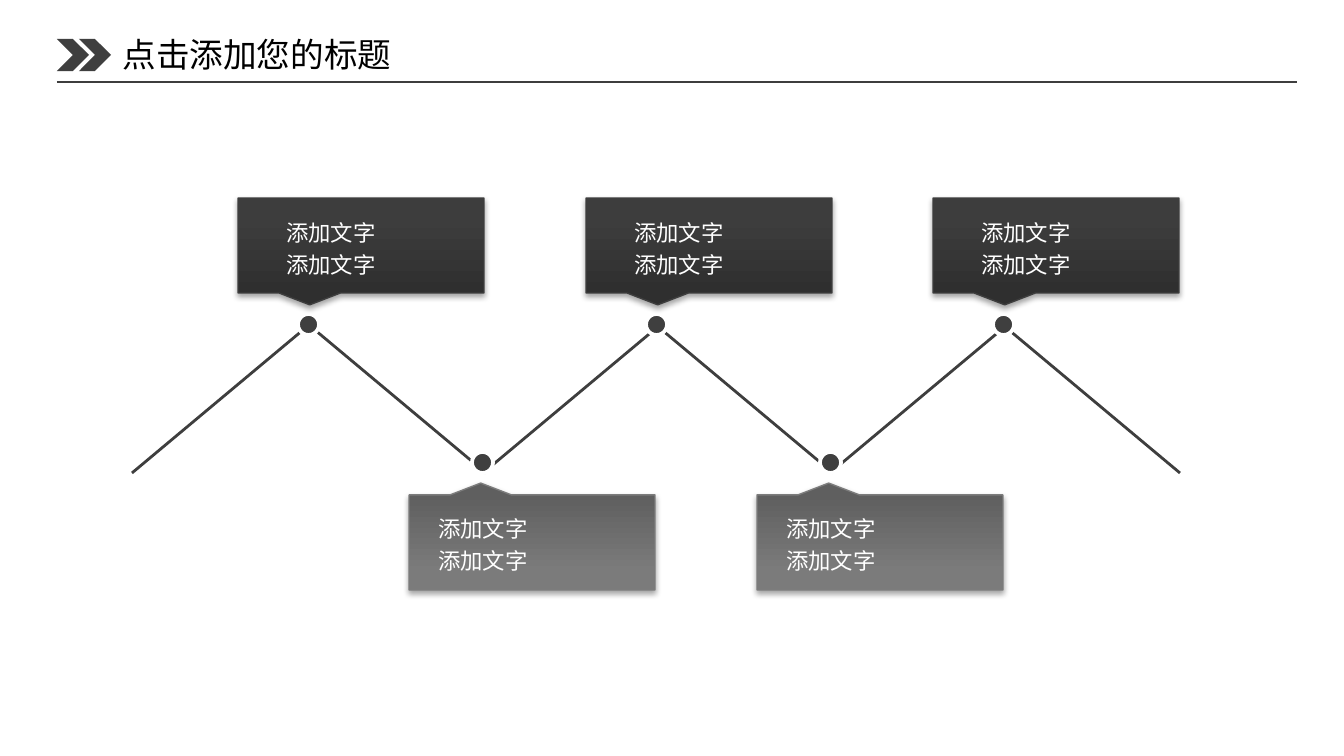
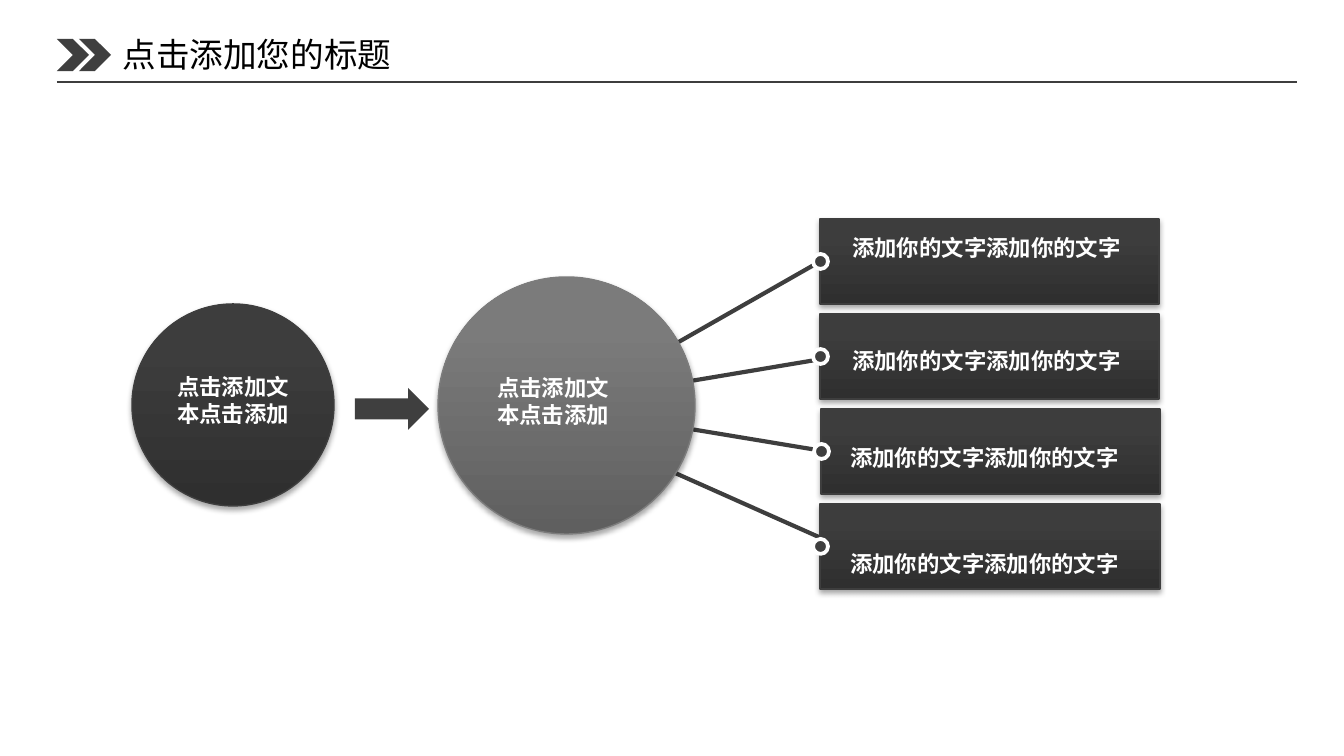
from copy import deepcopy

from lxml import etree
from pptx import Presentation
from pptx import util as u
from pptx.dml.color import RGBColor
from pptx.enum import shapes, text
from pptx.oxml.ns import qn

SCALE = 914400 / 134.4
FONT = "Noto Sans CJK SC"
COLORS = {"mark": "3F3F3F", "line": "3E3E3E", "white": "FFFFFF", "black": "000000"}
TONES = {
    "dark": {"stops": [(0, "2F2F2F"), (0.8, "3D3D3D"), (1, "3D3D3D")], "line": "3E3E3E"},
    "light": {"stops": [(0, "5F5F5F"), (0.8, "7B7B7B"), (1, "7C7C7C")], "line": "7C7C7C"},
}
TITLE_FORMAT = {"size": u.Pt(18), "bold": False}
NOTE_FORMAT = {"size": u.Pt(12), "bold": False}
LABEL_FORMAT = {"size": u.Pt(12), "bold": True}

TITLE = "点击添加您的标题"
TITLE_BOX = (109, 27, 298, 54)
CHEVRON_LEFTS = (57, 79)
RULE = ((57, 82), (1297, 82))

NOTE = ["添加文字", "添加文字"]
PEAK_STARTS = [(309, 309), (660, 656), (1007, 1003)]
PEAK_TOP, VALLEY_TOP, SLOPE_WIDTH = 325, 473, 177
CALLOUT_SIZE, NOTE_SIZE, DOT_SIZE = (246, 95), (152, 79), 21
CALLOUT_ROWS = [
    {"tone": "dark", "lefts": (238, 586, 933), "top": 198, "dot": (60, 116), "note": (35, 9), "flip": False},
    {"tone": "light", "lefts": (409, 757), "top": 495, "dot": (63, -43), "note": (16, 8), "flip": True},
]

CIRCLE_TEXT = "点击添加文本点击添加"
SOURCE_CIRCLE = {"tone": "dark", "box": (132, 304, 202, 202), "label": (164, 367, 140, 67)}
HUB_CIRCLE = {"tone": "light", "box": (438, 277, 257, 257), "label": (484, 368, 146, 67)}
ARROW_BOX = (355, 388, 74, 42)
BRANCH_TEXT = "添加你的文字添加你的文字"
BRANCH_TOP, BRANCH_STEP, BRANCH_HEIGHT, KNOB_SIZE = 219, 95, 85, 15
BRANCHES = [
    {"left": 820, "width": 339, "link": ((640, 364), (820, 261)), "label": (839, 228)},
    {"left": 820, "width": 339, "link": ((649, 388), (828, 358)), "label": (839, 341)},
    {"left": 821, "width": 339, "link": ((648, 422), (829, 452)), "label": (837, 438)},
    {"left": 820, "width": 340, "link": ((628, 452), (821, 538)), "label": (837, 544)},
]


def px(*values):
    return [u.Emu(round(value * SCALE)) for value in values]


def rgb(name):
    return RGBColor.from_string(COLORS.get(name, name))


def set_line(line, color, width):
    line.color.rgb = rgb(color)
    line.width = u.Pt(width)


def add_flat(slide, kind, box, outline=None):
    shape = slide.shapes.add_shape(kind, *px(*box))
    shape.shadow.inherit = False
    shape.fill.solid()
    shape.fill.fore_color.rgb = rgb("mark")
    if outline:
        set_line(shape.line, outline, 2)
    else:
        shape.line.fill.background()
    return shape


def add_dot(slide, left, top, size):
    add_flat(slide, shapes.MSO_SHAPE.OVAL, (left, top, size, size), "white")


def add_panel(slide, kind, box, tone):
    shape = slide.shapes.add_shape(kind, *px(*box))
    shape.fill.gradient()
    shape.fill.gradient_angle = 90
    properties = shape._element.spPr
    stop_list = properties.find(qn("a:gradFill")).find(qn("a:gsLst"))
    stop_list.append(deepcopy(stop_list[-1]))
    for stop, (position, color) in zip(shape.fill.gradient_stops, TONES[tone]["stops"]):
        stop.position = position
        stop.color.rgb = rgb(color)
    set_line(shape.line, TONES[tone]["line"], 0.75)
    shape.shadow.inherit = False
    shadow = etree.SubElement(
        properties.find(qn("a:effectLst")), qn("a:outerShdw"),
        blurRad=str(u.Pt(3.1)), dist=str(u.Pt(1.8)), dir="5400000", rotWithShape="0")
    color = etree.SubElement(shadow, qn("a:srgbClr"), val=COLORS["black"])
    etree.SubElement(color, qn("a:alpha"), val="35000")
    return shape


def add_line(container, start, end, width):
    connector = container.shapes.add_connector(
        shapes.MSO_CONNECTOR.STRAIGHT, *px(*start, *end))
    set_line(connector.line, "line", width)
    etree.SubElement(connector._element.spPr, qn("a:effectLst"))
    return connector


def write(shape, lines, format_values, color, wrap=True, spacing=None):
    frame = shape.text_frame
    frame_values = {
        "word_wrap": wrap,
        "auto_size": text.MSO_AUTO_SIZE.SHAPE_TO_FIT_TEXT,
        "vertical_anchor": text.MSO_ANCHOR.TOP,
    }
    for name, value in frame_values.items():
        setattr(frame, name, value)
    frame.text = "\n".join(lines)
    for paragraph in frame.paragraphs:
        paragraph.alignment = text.PP_ALIGN.LEFT
        paragraph.line_spacing = spacing
        font = paragraph.runs[0].font
        for name, value in {**format_values, "name": FONT}.items():
            setattr(font, name, value)
        font.color.rgb = rgb(color)
        etree.SubElement(font._element, qn("a:ea"), typeface=FONT)


def add_label(slide, box, lines, format_values, **options):
    label = slide.shapes.add_textbox(*px(*box))
    write(label, lines, format_values, "white", **options)


def add_titled_slide(presentation, layout):
    slide = presentation.slides.add_slide(layout)
    title = slide.shapes.title
    title.left, title.top, title.width, title.height = px(*TITLE_BOX)
    write(title, [TITLE], TITLE_FORMAT, "black", wrap=False)
    return slide


def move_header_to_layout(slide, layout):
    for placeholder in list(layout.placeholders)[1:]:
        placeholder._element.getparent().remove(placeholder._element)
    header = [add_flat(slide, shapes.MSO_SHAPE.CHEVRON, (left, 39, 32, 32)) for left in CHEVRON_LEFTS]
    header.append(add_line(slide, *RULE, 0.75))
    for shape in header:
        layout.shapes._spTree.append(shape._element)


def build_zigzag(slide):
    group = slide.shapes.add_group_shape()
    for starts in PEAK_STARTS:
        for start, direction in zip(starts, (-1, 1)):
            end = (start + direction * SLOPE_WIDTH, VALLEY_TOP)
            add_line(group, (start, PEAK_TOP), end, 1.5)
    for row in CALLOUT_ROWS:
        top = row["top"]
        for left in row["lefts"]:
            dot_x, dot_y = row["dot"]
            add_dot(slide, left + dot_x, top + dot_y, DOT_SIZE)
            callout = add_panel(slide, shapes.MSO_SHAPE.RECTANGULAR_CALLOUT,
                                (left, top, *CALLOUT_SIZE), row["tone"])
            if row["flip"]:
                callout._element.spPr.find(qn("a:xfrm")).set("flipV", "1")
            note_x, note_y = row["note"]
            add_label(slide, (left + note_x, top + note_y, *NOTE_SIZE), NOTE, NOTE_FORMAT, spacing=1.2)


def add_circle(slide, circle):
    add_panel(slide, shapes.MSO_SHAPE.OVAL, circle["box"], circle["tone"])
    add_label(slide, circle["label"], [CIRCLE_TEXT], LABEL_FORMAT)


def build_branches(slide):
    add_circle(slide, SOURCE_CIRCLE)
    add_flat(slide, shapes.MSO_SHAPE.RIGHT_ARROW, ARROW_BOX)
    links = [add_line(slide, *branch["link"], 2.25) for branch in BRANCHES]
    for index, (branch, link) in enumerate(zip(BRANCHES, links)):
        left, top = branch["left"], BRANCH_TOP + index * BRANCH_STEP
        panel = add_panel(slide, shapes.MSO_SHAPE.RECTANGLE,
                          (left, top, branch["width"], BRANCH_HEIGHT), "dark")
        if branch["link"][1] == (left, top + BRANCH_HEIGHT // 2):
            link.end_connect(panel, 1)
        add_dot(slide, left - KNOB_SIZE // 2, top + 35, KNOB_SIZE)
        add_label(slide, (*branch["label"], 298, 40), [BRANCH_TEXT], LABEL_FORMAT, wrap=False)
    add_circle(slide, HUB_CIRCLE)


def main():
    presentation = Presentation()
    presentation.slide_width, presentation.slide_height = px(1344, 756)
    layout = presentation.slide_layouts[5]
    zigzag_slide = add_titled_slide(presentation, layout)
    move_header_to_layout(zigzag_slide, layout)
    build_zigzag(zigzag_slide)
    build_branches(add_titled_slide(presentation, layout))
    presentation.save("out.pptx")


if __name__ == "__main__":
    main()
